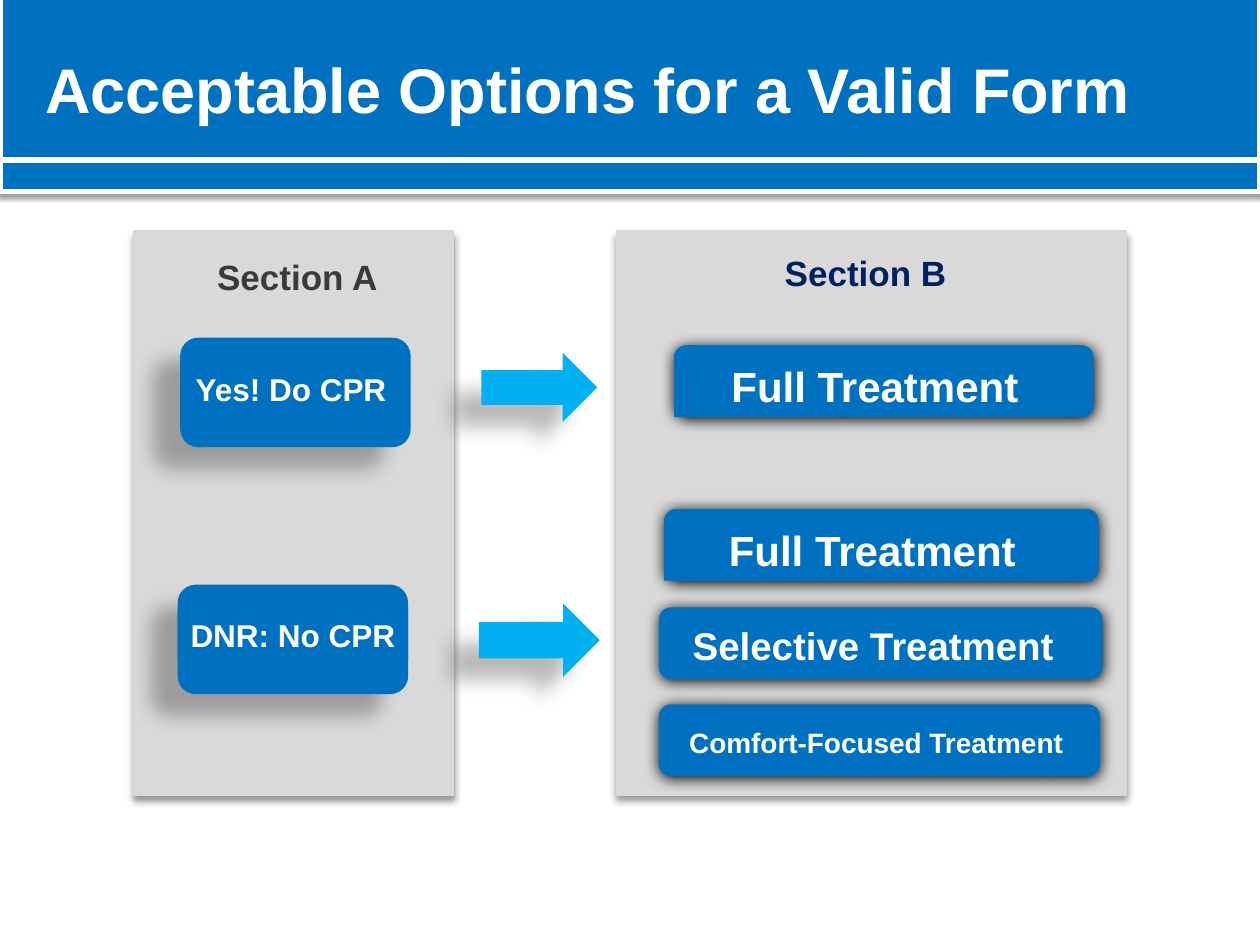
import pptx
import pptx.dml.color
import pptx.enum.shapes
import pptx.enum.text
import pptx.oxml
import pptx.oxml.ns
import pptx.util

RGBColor = pptx.dml.color.RGBColor
SHAPE = pptx.enum.shapes.MSO_SHAPE
ALIGN = pptx.enum.text.PP_ALIGN
ANCHOR = pptx.enum.text.MSO_ANCHOR
AUTO_SIZE = pptx.enum.text.MSO_AUTO_SIZE

EMU_PER_PX = 9144  # 100 px to the inch
EMU_PER_POINT = 12700
FONT = "Arial"

WHITE = RGBColor(0xFF, 0xFF, 0xFF)
BLUE = RGBColor(0x00, 0x70, 0xC0)
SKY = RGBColor(0x00, 0xB0, 0xF0)
PANEL_GREY = RGBColor(0xD9, 0xD9, 0xD9)
DARK_GREY = RGBColor(0x3A, 0x3A, 0x3A)
NAVY = RGBColor(0x00, 0x20, 0x60)

# Shadows: opacity in percent, blur and distance in points, direction in degrees
BAND_SHADOW = (38, 3.1, 1.6, 90)
PANEL_SHADOW = (40, 4, 3, 90)
CAST_SHADOW = (28, 11.8, 19.7, 141)
GLOW_SHADOW = (100, 8.5, 1, 90)

BANDS = [(0, -5, 1000, 132), (0, 127, 1000, 25)]
PANELS = [(489, 183, 405, 448), (106, 183, 254, 448)]
HEADINGS = [
    ("Section A", (129, 198, 214, 44), DARK_GREY),
    ("Section B", (580, 195, 214, 44), NAVY),
]
ARROWS = [(382, 280, 92, 55), (380, 479, 96, 58)]
# Wording, text size, button place, label place, shadow
OPTIONS = [
    ("Yes! Do CPR", 18, (143, 268, 183, 87), (143, 289, 176, 40), CAST_SHADOW),
    ("DNR: No CPR", 18, (141, 464, 183, 87), (141, 484, 183, 40), CAST_SHADOW),
    ("Full Treatment ", 24, (535, 274, 333, 57), (535, 281, 328, 50), GLOW_SHADOW),
    ("Full Treatment ", 24, (527, 404, 345, 57), (527, 411, 340, 50), GLOW_SHADOW),
    ("Selective Treatment", 22, (523, 482, 352, 57), (529, 489, 328, 47), GLOW_SHADOW),
    ("Comfort-Focused Treatment ", 16, (523, 559, 350, 57), (528, 571, 341, 37), GLOW_SHADOW),
]


def px(*lengths):
    return [pptx.util.Emu(length * EMU_PER_PX) for length in lengths]


def set_shadow(shape, opacity, blur, distance, direction):
    """Give the shape a black outer shadow that does not turn with it."""
    shape.shadow.inherit = False
    effects = shape.element.spPr.find(pptx.oxml.ns.qn("a:effectLst"))
    effects.append(pptx.oxml.parse_xml(
        f'<a:outerShdw {pptx.oxml.ns.nsdecls("a")} blurRad="{round(blur * EMU_PER_POINT)}" '
        f'dist="{round(distance * EMU_PER_POINT)}" dir="{direction * 60000}" '
        f'algn="ctr" rotWithShape="0"><a:srgbClr val="000000">'
        f'<a:alpha val="{opacity * 1000}"/></a:srgbClr></a:outerShdw>'))


def add_block(page, kind, place, fill, shadow=None, line=None, line_width=0):
    shape = page.shapes.add_shape(kind, *px(*place))
    shape.fill.solid()
    shape.fill.fore_color.rgb = fill
    if line is None:
        shape.line.fill.background()
    else:
        shape.line.color.rgb = line
        shape.line.width = pptx.util.Pt(line_width)
    if shadow:
        set_shadow(shape, *shadow)
    else:
        shape.shadow.inherit = False
    return shape


def write(shape, text, size, color, align=ALIGN.CENTER,
          anchor=ANCHOR.TOP, auto_size=AUTO_SIZE.SHAPE_TO_FIT_TEXT):
    frame = shape.text_frame
    frame.text = text
    frame.word_wrap = True
    frame.auto_size = auto_size
    frame.vertical_anchor = anchor
    para = frame.paragraphs[0]
    para.alignment = align
    para.font.name = FONT
    para.font.size = pptx.util.Pt(size)
    para.font.bold = True
    para.font.color.rgb = color


def add_header(page, text):
    for place in BANDS:
        add_block(page, SHAPE.RECTANGLE, place, BLUE, BAND_SHADOW, WHITE, 3)
    title = page.shapes.title
    title.left, title.top, title.width, title.height = px(26, 8, 900, 125)
    write(title, text, 36, WHITE, ALIGN.LEFT, ANCHOR.MIDDLE, AUTO_SIZE.NONE)
    title.element.getparent().append(title.element)  # in front of the bands


def add_option(page, text, size, button_place, label_place, shadow):
    """Add a rounded button with its label box on top."""
    add_block(page, SHAPE.ROUNDED_RECTANGLE, button_place, BLUE, shadow)
    label = add_block(page, SHAPE.RECTANGLE, label_place, BLUE)
    write(label, text, size, WHITE)


def add_arrow(page, place):
    arrow = add_block(page, SHAPE.LEFT_ARROW, place, SKY, CAST_SHADOW)
    arrow.rotation = 180


def main():
    deck = pptx.Presentation()
    deck.slide_width, deck.slide_height = px(1000, 750)
    page = deck.slides.add_slide(deck.slide_layouts.get_by_name("Title Only"))

    add_header(page, "Acceptable Options for a Valid Form")
    for place in PANELS:
        add_block(page, SHAPE.RECTANGLE, place, PANEL_GREY, PANEL_SHADOW, PANEL_GREY, 0.75)
    for option in OPTIONS:
        add_option(page, *option)
    for text, place, color in HEADINGS:
        write(page.shapes.add_textbox(*px(*place)), text, 20, color)
    for place in ARROWS:
        add_arrow(page, place)

    deck.save("out.pptx")


if __name__ == "__main__":
    main()
